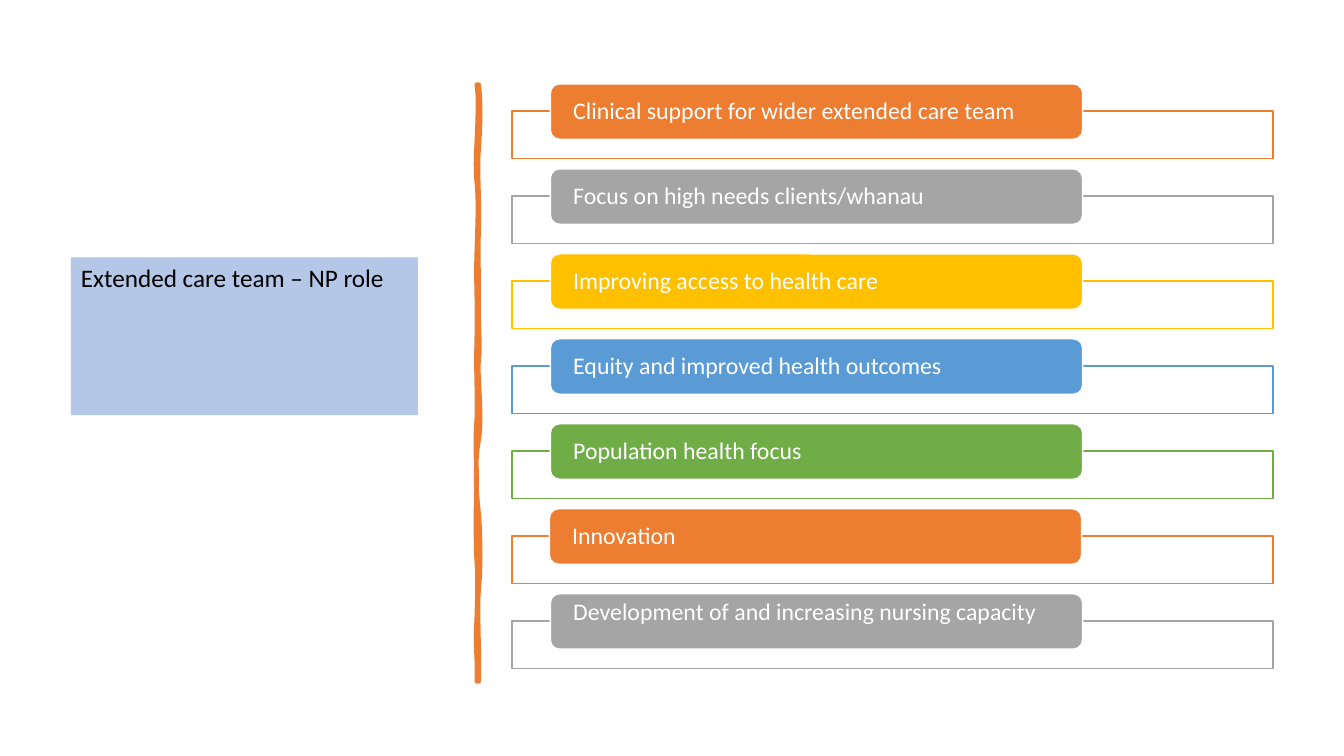
from lxml.etree import SubElement
from pptx import Presentation
from pptx.dml.color import RGBColor
from pptx.enum.shapes import MSO_SHAPE
from pptx.enum.text import MSO_ANCHOR, MSO_AUTO_SIZE, PP_ALIGN
from pptx.oxml.ns import qn
from pptx.util import Pt

COLORS = {
    "orange": "ED7D31", "gray": "A5A5A5", "gold": "FFC000", "blue": "5B9BD5",
    "green": "70AD47", "pale_blue": "B4C7E7", "white": "FFFFFF", "black": "000000",
}
ROLES = [
    ("Clinical support for wider extended care team", "orange"),
    ("Focus on high needs clients/whanau", "gray"),
    ("Improving access to health care", "gold"),
    ("Equity and improved health outcomes", "blue"),
    ("Population health focus", "green"),
    ("Innovation", "orange"),
    ("Development of and increasing nursing capacity", "gray"),
]
ROW_PITCH = 60.7

# Divider edges: each curve is control x, y, control x, y and end y.
DIVIDER_TOP = 60.5
DIVIDER_BOTTOM = 486.7
RIGHT_X, LEFT_X = 342, 340.6
RIGHT_CURVES = [
    (343.4, 73.4, 343.4, 85.7, 105.1), (340.6, 124.6, 342.7, 140.4, 162.7),
    (341.3, 185, 342, 188.6, 211.7), (341.3, 234, 343.4, 246.2, 256.3),
    (340.6, 266.4, 344.9, 298.1, 313.9), (339.1, 329, 339.8, 348.5, 367.2),
    (343.4, 385.9, 343.4, 406.1, 420.5), (340.6, 434.2, 342.7, 468, DIVIDER_BOTTOM),
]
LEFT_CURVES = [
    (341.3, 465.1, 339.1, 463.7, 441.4), (341.3, 419.8, 341.3, 410.4, 401),
    (339.8, 391.7, 339.8, 356.4, 343.4), (340.6, 330.5, 339.1, 320.4, 298.8),
    (341.3, 277.9, 339.8, 268.6, 241.2), (341.3, 214.6, 339.8, 202.3, 180),
    (341.3, 157, 342, 144, 130.3), (338.4, 117.4, 343.4, 74.9, DIVIDER_TOP),
]


def color(name):
    return RGBColor.from_string(COLORS[name])


def write_text(shape, text, size=17, ink="white", anchor=MSO_ANCHOR.MIDDLE,
               side_inset=7.2, end_inset=0, line_spacing=1.0):
    frame = shape.text_frame
    frame.word_wrap = True
    frame.vertical_anchor = anchor
    frame.margin_left = frame.margin_right = Pt(side_inset)
    frame.margin_top = frame.margin_bottom = Pt(end_inset)
    frame.text = text
    paragraph = frame.paragraphs[0]
    paragraph.alignment = PP_ALIGN.LEFT
    paragraph.line_spacing = line_spacing
    font = paragraph.runs[0].font
    font.name, font.size, font.color.rgb = "Calibri", Pt(size), color(ink)


def sample_edge(x, start_y, curves, steps=8):
    """Return points along Bezier curves whose ends all lie at the same x."""
    points = []
    for x1, y1, x2, y2, end_y in curves:
        for step in range(1, steps + 1):
            t = step / steps
            weights = ((1 - t) ** 3, 3 * t * (1 - t) ** 2, 3 * t * t * (1 - t), t ** 3)
            points.append((sum(w * v for w, v in zip(weights, (x, x1, x2, x))),
                           sum(w * v for w, v in zip(weights, (start_y, y1, y2, end_y)))))
        start_y = end_y
    return points


class RoleSlide:
    def __init__(self, slide):
        self.slide = slide

    def paint(self, shape, fill, line, width):
        shape.shadow.inherit = False
        shape.fill.solid()
        shape.fill.fore_color.rgb = color(fill)
        shape.line.color.rgb = color(line)
        shape.line.width = Pt(width)

    def title(self, text, left, top, width, height):
        title = self.slide.shapes.title
        title.left, title.top, title.width, title.height = map(Pt, (left, top, width, height))
        title.fill.solid()
        title.fill.fore_color.rgb = color("pale_blue")
        write_text(title, text, size=18, ink="black", anchor=MSO_ANCHOR.TOP, end_inset=3.6)
        title.text_frame.auto_size = MSO_AUTO_SIZE.SHAPE_TO_FIT_TEXT

    def divider(self):
        points = [(RIGHT_X, DIVIDER_TOP)]
        points += sample_edge(RIGHT_X, DIVIDER_TOP, RIGHT_CURVES)
        points.append((LEFT_X, DIVIDER_BOTTOM))
        points += sample_edge(LEFT_X, DIVIDER_BOTTOM, LEFT_CURVES)
        points = [(Pt(x), Pt(y)) for x, y in points]
        builder = self.slide.shapes.build_freeform(*points[0])
        builder.add_line_segments(points[1:], close=True)
        shape = builder.convert_to_shape()
        self.paint(shape, "orange", "orange", 3.25)
        SubElement(shape.line._get_or_add_ln(), qn("a:round"))

    def box(self, kind, left, top, width, height, fill, line):
        shape = self.slide.shapes.add_shape(kind, *map(Pt, (left, top, width, height)))
        self.paint(shape, fill, line, 1)
        return shape

    def frame(self, top, accent):
        shape = self.box(MSO_SHAPE.RECTANGLE, 365.8, top, 543.6, 33.8, "white", accent)
        fill_color = shape.fill._xPr.find(qn("a:solidFill"))[0]
        SubElement(fill_color, qn("a:alpha"), val="90000")

    def label(self, text, left, top, accent, **text_format):
        shape = self.box(MSO_SHAPE.ROUNDED_RECTANGLE, left, top, 380.2, 39.6, accent, "white")
        write_text(shape, text, side_inset=14.4, **text_format)


def main():
    presentation = Presentation()
    presentation.slide_width, presentation.slide_height = Pt(960), Pt(540)
    page = RoleSlide(presentation.slides.add_slide(presentation.slide_layouts[5]))
    page.divider()
    for row, (text, accent) in enumerate(ROLES):
        offset = row * ROW_PITCH
        left = 392.4 if text == "Innovation" else 393.1
        if row == len(ROLES) - 1:
            text_format = {"anchor": MSO_ANCHOR.TOP}
        else:
            text_format = {"line_spacing": 0.9}
        page.frame(79.4 + offset, accent)
        page.label(text, left, 59.9 + offset, accent, **text_format)
    page.title("Extended care team – NP role", 50.6, 183.8, 248, 29.1)
    presentation.save("out.pptx")


if __name__ == "__main__":
    main()
